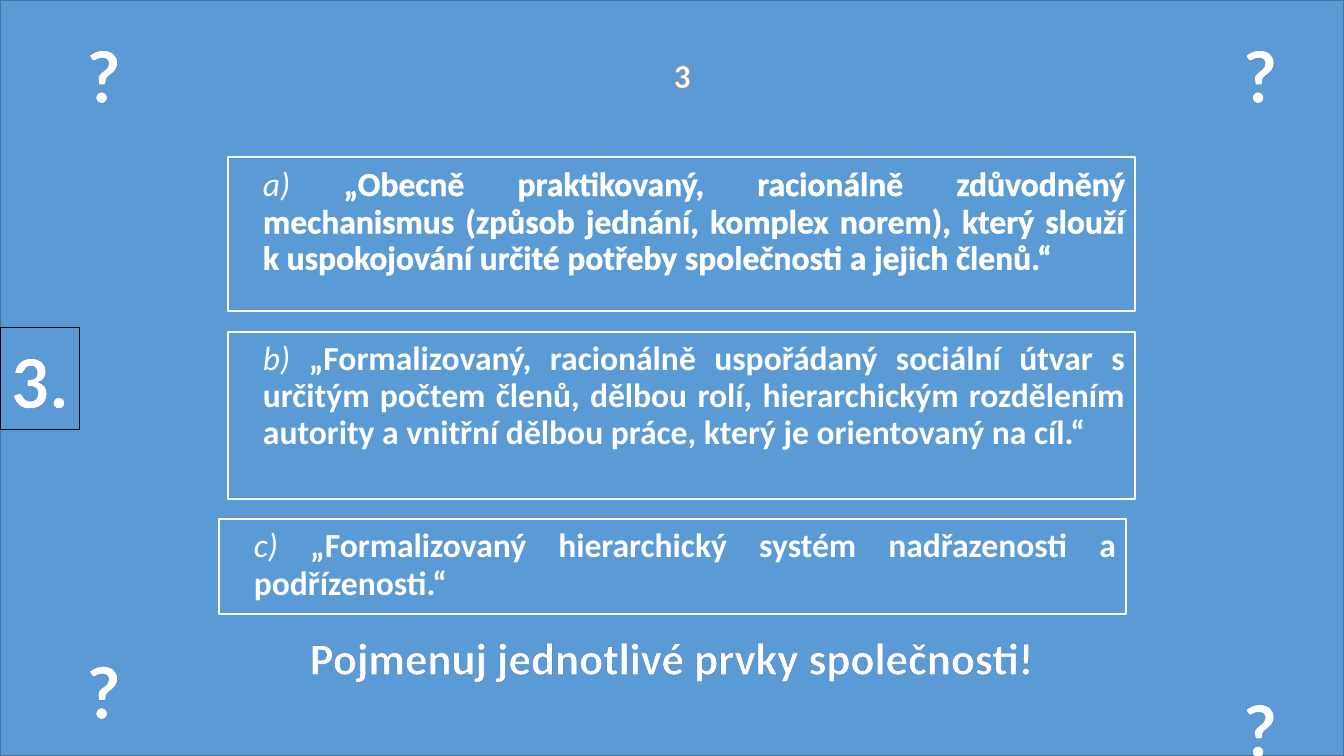
from lxml import etree
from pptx import Presentation
from pptx import util as u
from pptx.dml.color import RGBColor
from pptx.enum import shapes, text
from pptx.oxml import ns

PX = 9144
WIDTH, HEIGHT = 1333, 750
BLUE, WHITE, ACCENT, ORANGE = "5B9BD5", "FFFFFF", "4472C4", "ED7D31"

CORNERS = [(75, 22), (1222, 22), (75, 633), (1222, 671)]
DEFINITIONS = [
    ((226, 156, 900, 153), "a) ",
     "„Obecně praktikovaný, racionálně zdůvodněný mechanismus (způsob jednání, komplex norem), "
     "který slouží k uspokojování určité potřeby společnosti a jejich členů.“", 1.45),
    ((226, 329, 900, 166), "b) ",
     "„Formalizovaný, racionálně uspořádaný sociální útvar s určitým počtem členů, dělbou rolí, "
     "hierarchickým rozdělením autority a vnitřní dělbou práce, který je orientovaný na cíl.“", 0),
    ((217, 515, 900, 94), "c) ",
     "„Formalizovaný hierarchický systém nadřazenosti a podřízenosti.“", 0),
]


def colour(value):
    return RGBColor.from_string(value)


def emu(box):
    return [length * PX for length in box]


def style(span, size, bold=False, italic=False):
    span.font.name = "Calibri"
    span.font.size = u.Pt(size)
    span.font.bold = bold
    span.font.italic = italic
    span.font.color.rgb = colour(WHITE)


def outline(span, value, width):
    line = etree.Element(ns.qn("a:ln"), w=str(u.Pt(width)))
    fill = etree.SubElement(line, ns.qn("a:solidFill"))
    etree.SubElement(fill, ns.qn("a:srgbClr"), val=value)
    span.font._element.insert(0, line)


def add_panel(page, box, line, width):
    panel = page.shapes.add_shape(shapes.MSO_SHAPE.RECTANGLE, *emu(box))
    panel.shadow.inherit = False
    panel.fill.solid()
    panel.fill.fore_color.rgb = colour(BLUE)
    panel.line.color.rgb = colour(line)
    panel.line.width = u.Pt(width)
    return panel


def add_label(page, box, words, size, edge=ACCENT, edge_width=0.8):
    label = page.shapes.add_textbox(*emu(box))
    frame = label.text_frame
    frame.text = words
    frame.word_wrap = False
    frame.auto_size = text.MSO_AUTO_SIZE.SHAPE_TO_FIT_TEXT
    para = frame.paragraphs[0]
    para.alignment = text.PP_ALIGN.CENTER
    style(para.runs[0], size, bold=True)
    outline(para.runs[0], edge, edge_width)
    return label


def add_background(page, box):
    left, top, width, height = box
    add_panel(page, box, "43739E", 1)
    for x, y in CORNERS:
        add_label(page, (left + x, top + y, 55, 101), "?", 54)


def add_definition(page, box, letter, words, edge_width):
    frame = add_panel(page, box, WHITE, 1.5).text_frame
    frame.word_wrap = True
    frame.vertical_anchor = text.MSO_ANCHOR.TOP
    para = frame.paragraphs[0]
    para.alignment = text.PP_ALIGN.JUSTIFY
    para.line_spacing = 0.9
    para.space_before = u.Pt(10)
    indent = 25 * PX
    para._p.get_or_add_pPr().set("marL", str(indent))
    para._p.get_or_add_pPr().set("indent", str(-indent))
    for part, size, bold in (("\t", 28, False), (letter, 24, False), (words, 24, True)):
        span = para.add_run()
        span.text = part
        style(span, size, bold, italic=not bold)
    if edge_width:
        outline(span, WHITE, edge_width)


def add_question_page(deck):
    page = deck.slides.add_slide(deck.slide_layouts[6])
    add_background(page, (0, 0, WIDTH, HEIGHT))
    number = add_label(page, (0, 325, 79, 101), "3.", 54)
    number.line.color.rgb = colour("000000")
    number.line.width = u.Pt(0.75)
    add_label(page, (294, 620, 745, 64), "Pojmenuj jednotlivé prvky společnosti!", 32)
    add_label(page, (658, 49, 37, 50), "3", 24, ORANGE, 0.52)
    for definition in DEFINITIONS:
        add_definition(page, *definition)


def main():
    deck = Presentation()
    deck.slide_width, deck.slide_height = emu((WIDTH, HEIGHT))
    add_question_page(deck)
    deck.save("out.pptx")


if __name__ == "__main__":
    main()
